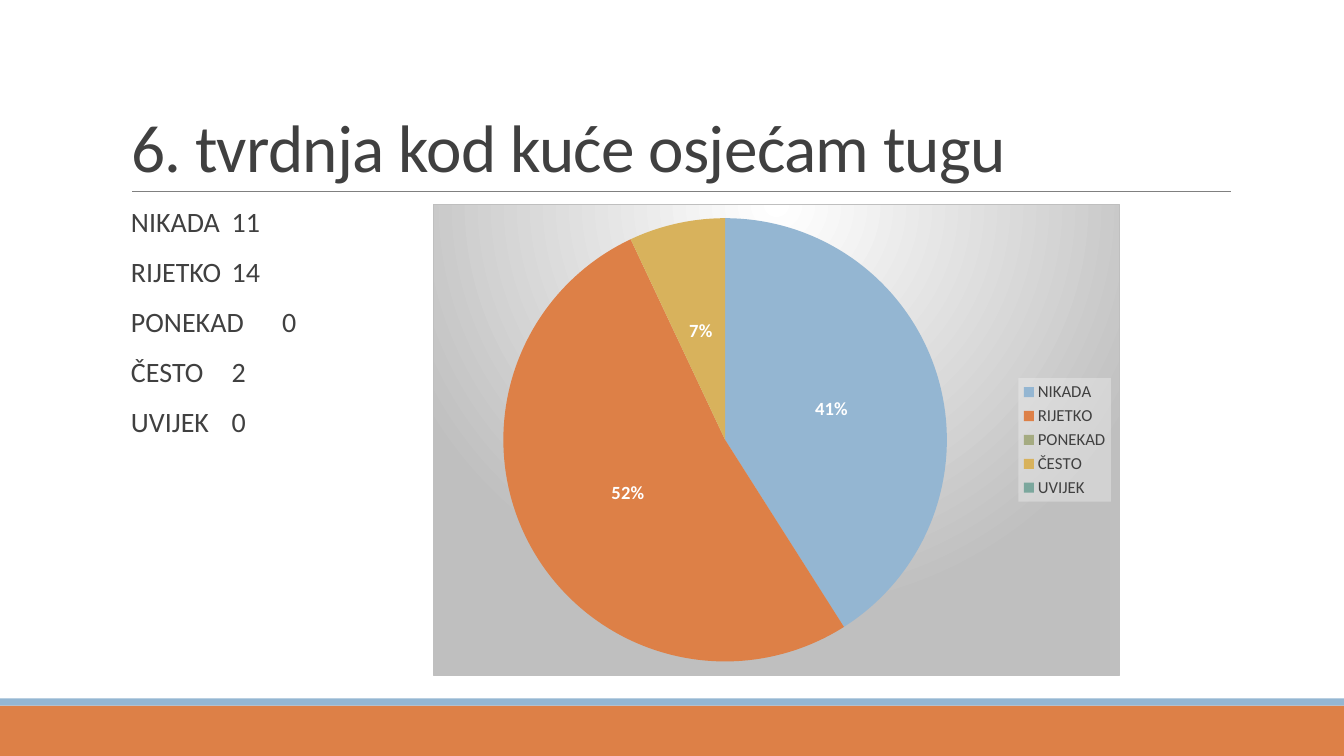
from lxml.etree import SubElement
from pptx import Presentation
from pptx.chart.data import CategoryChartData
from pptx.dml.color import RGBColor
from pptx.enum.chart import XL_CHART_TYPE as ChartType
from pptx.enum.chart import XL_LABEL_POSITION as LabelPosition
from pptx.enum.chart import XL_LEGEND_POSITION as LegendPosition
from pptx.enum.shapes import MSO_CONNECTOR as Connector
from pptx.enum.shapes import MSO_SHAPE as Shape
from pptx.enum.text import MSO_ANCHOR as Anchor
from pptx.enum.text import MSO_AUTO_SIZE as AutoSize
from pptx.enum.text import PP_ALIGN as Align
from pptx.oxml import parse_xml
from pptx.oxml.ns import nsdecls, qn
from pptx.util import Cm, Pt

COLORS = {
    "blue": "94B6D2", "orange": "DD8047", "olive": "A5AB81",
    "gold": "D8B25C", "teal": "7BA79D", "text": "404040",
    "rule": "808080", "white": "FFFFFF", "silver": "BFBFBF", "pale": "F2F2F2",
}
FONT = "Calibri"
ANSWERS = [
    ("NIKADA", 11, 41, "blue"),
    ("RIJETKO", 14, 52, "orange"),
    ("PONEKAD", 0, 0, "olive"),
    ("ČESTO", 2, 7, "gold"),
    ("UVIJEK", 0, None, "teal"),
]


def color(name):
    """Return the named colour."""
    return RGBColor.from_string(COLORS[name])


def format_font(font, size, name="text", bold=False):
    """Set typeface, size, colour and weight."""
    font.name, font.size, font.bold = FONT, Pt(size), bold
    font.color.rgb = color(name)


def place(shape, left, top, width, height):
    """Move and size a shape in centimetres."""
    shape.left, shape.top = Cm(left), Cm(top)
    shape.width, shape.height = Cm(width), Cm(height)


def add_band(page, top, height, fill):
    """Draw a full-width footer band."""
    band = page.shapes.add_shape(Shape.RECTANGLE, 0, Cm(top), Cm(33.87), Cm(height))
    band.shadow.inherit = False
    band.fill.solid()
    band.fill.fore_color.rgb = color(fill)
    band.line.fill.background()


def add_rule(page, left, right, top):
    """Draw the thin line under the title."""
    rule = page.shapes.add_connector(Connector.STRAIGHT, Cm(left), Cm(top), Cm(right), Cm(top))
    rule.line.color.rgb = color("rule")
    rule.line.width = Pt(0.5)
    SubElement(rule._element.spPr, qn("a:effectLst"))


def write_paragraph(para, text, size, spacing, before=0, after=0, tracking=0):
    """Write one left-aligned paragraph."""
    para.alignment = Align.LEFT
    para.line_spacing = spacing
    para.space_before, para.space_after = Pt(before), Pt(after)
    span = para.add_run()
    span.text = text
    format_font(span.font, size)
    if tracking:
        span._r.get_or_add_rPr().set("spc", str(int(tracking * 100)))


def write_title(page, text):
    """Fill and place the title placeholder."""
    title = page.shapes.title
    place(title, 3.05, 0.79, 27.94, 4.04)
    frame = title.text_frame
    frame.auto_size = AutoSize.NONE
    frame.vertical_anchor = Anchor.BOTTOM
    write_paragraph(frame.paragraphs[0], text, 48, 0.85, tracking=-0.5)


def write_counts(page):
    """List each answer with its count at a right tab stop."""
    body = page.placeholders[1]
    place(body, 3.05, 5.13, 27.94, 11.18)
    frame = body.text_frame
    frame.auto_size = AutoSize.NONE
    frame.vertical_anchor = Anchor.TOP
    frame.margin_left = frame.margin_right = 0
    for index, (answer, count, _, _) in enumerate(ANSWERS):
        para = frame.add_paragraph() if index else frame.paragraphs[0]
        write_paragraph(para, f"{answer}\t{count}", 20, 0.9, before=12, after=2)
        layout = para._p.get_or_add_pPr()
        layout.set("marL", str(Cm(0.25)))
        layout.set("indent", "0")
        SubElement(layout, qn("a:buNone"))
        stops = SubElement(layout, qn("a:tabLst"))
        SubElement(stops, qn("a:tab"), pos=str(Cm(4.27)), algn="r")


def style_chart_area(chart):
    """Give the chart a radial background and a thin border."""
    chart._chartSpace.find(qn("c:chart")).addnext(parse_xml(
        f'<c:spPr {nsdecls("c", "a")}><a:gradFill><a:gsLst>'
        f'<a:gs pos="0"><a:srgbClr val="{COLORS["white"]}"/></a:gs>'
        f'<a:gs pos="100000"><a:srgbClr val="{COLORS["silver"]}"/></a:gs></a:gsLst>'
        '<a:path path="circle"><a:fillToRect l="50000" t="0" r="50000" b="100000"/></a:path>'
        f'</a:gradFill><a:ln w="{Pt(0.75)}"><a:solidFill><a:srgbClr val="{COLORS["silver"]}"/>'
        '</a:solidFill></a:ln></c:spPr>'))


def style_legend(chart):
    """Show the legend at the right on a translucent panel."""
    chart.has_legend = True
    legend = chart.legend
    legend.position = LegendPosition.RIGHT
    legend.include_in_layout = False
    format_font(legend.font, 12)
    legend._element.find(qn("c:overlay")).addnext(parse_xml(
        f'<c:spPr {nsdecls("c", "a")}><a:solidFill><a:srgbClr val="{COLORS["pale"]}">'
        '<a:alpha val="39000"/></a:srgbClr></a:solidFill></c:spPr>'))


def place_plot(chart, **fractions):
    """Fix the inner plot area as fractions of the chart."""
    area = chart._chartSpace.find(qn("c:chart")).find(qn("c:plotArea"))
    for old in area.findall(qn("c:layout")):
        area.remove(old)
    sizes = "".join(f'<c:{key} val="{value}"/>' for key, value in fractions.items())
    area.insert(0, parse_xml(
        f'<c:layout {nsdecls("c")}><c:manualLayout><c:layoutTarget val="inner"/>'
        f'<c:xMode val="edge"/><c:yMode val="edge"/>{sizes}</c:manualLayout></c:layout>'))


def label_slices(series):
    """Show centred percentages, except on zero slices."""
    labels = series.data_labels
    labels.show_percentage, labels.show_value = True, False
    labels.number_format, labels.number_format_is_linked = "0%", False
    labels.position = LabelPosition.CENTER
    format_font(labels.font, 13.3, "white", bold=True)
    empty = [index for index, answer in enumerate(ANSWERS) if not answer[2]]
    for order, index in enumerate(empty):
        labels._element.insert(order, parse_xml(
            f'<c:dLbl {nsdecls("c")}><c:idx val="{index}"/><c:delete val="1"/></c:dLbl>'))


def add_pie(page):
    """Add the pie chart of answer shares."""
    data = CategoryChartData()
    data.categories = [answer[0] for answer in ANSWERS]
    data.add_series("Series 1", [answer[2] for answer in ANSWERS])
    chart = page.shapes.add_chart(
        ChartType.PIE, Cm(10.92), Cm(5.13), Cm(17.3), Cm(11.91), data).chart
    chart.has_title = False
    format_font(chart.font, 10)
    chart.plots[0].vary_by_categories = True
    series = chart.plots[0].series[0]
    for index, answer in enumerate(ANSWERS):
        fill = series.points[index].format.fill
        fill.solid()
        fill.fore_color.rgb = color(answer[3])
    label_slices(series)
    style_legend(chart)
    style_chart_area(chart)
    place_plot(chart, x=0.1, y=0.03, w=0.65, h=0.94)


def main():
    """Build and save the slide."""
    deck = Presentation()
    deck.slide_width, deck.slide_height = Cm(33.87), Cm(19.05)
    page = deck.slides.add_slide(deck.slide_layouts[1])
    add_band(page, 17.78, 1.27, "orange")
    add_band(page, 17.6, 0.18, "blue")
    add_rule(page, 3.33, 31.01, 4.83)
    write_title(page, "6. tvrdnja kod kuće osjećam tugu")
    write_counts(page)
    add_pie(page)
    deck.save("out.pptx")


if __name__ == "__main__":
    main()
